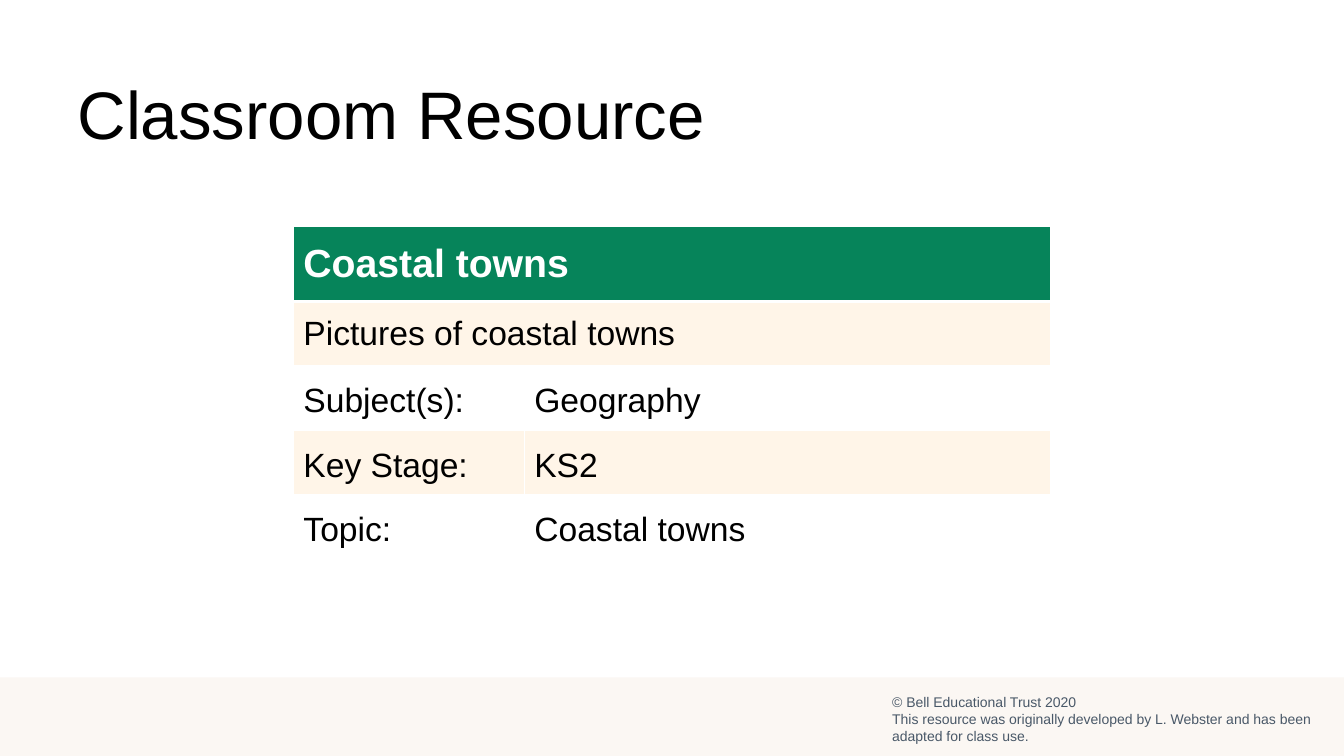
"""Build the title slide of a teaching resource on coastal towns."""
from lxml.etree import SubElement
from pptx import Presentation
from pptx.dml.color import RGBColor
from pptx.enum.shapes import MSO_SHAPE as Shape
from pptx.enum.text import MSO_ANCHOR as Anchor, MSO_AUTO_SIZE as AutoSize
from pptx.oxml.ns import qn
from pptx.util import Inches, Pt

FONT = "Arial"
BLACK = RGBColor(0x00, 0x00, 0x00)
WHITE = RGBColor(0xFF, 0xFF, 0xFF)
GREEN = RGBColor(0x06, 0x84, 0x5A)
CREAM = RGBColor(0xFF, 0xF5, 0xE8)
FOOTER_FILL = RGBColor(0xFB, 0xF7, 0xF3)
SLATE = RGBColor(0x49, 0x58, 0x68)

COLUMN_WIDTHS = (2.29, 5.22)
HEADER_HEIGHT, ROW_HEIGHT = 0.74, 0.64
ROWS = [
    ("Coastal towns",),
    ("Pictures of coastal towns",),
    ("Subject(s):", "Geography"),
    ("Key Stage:", "KS2"),
    ("Topic:", "Coastal towns"),
]
CREDITS = [
    "© Bell Educational Trust 2020",
    "This resource was originally developed by L. Webster and has been "
    "adapted for class use.",
]


def style_font(para, size, color, bold=False):
    """Set the font of a whole paragraph."""
    font = para.font
    font.name, font.size, font.bold = FONT, Pt(size), bold
    font.color.rgb = color


def add_text(slide, lines, left, top, width, height, size, color, wrap):
    """Place a text box with one paragraph for each line."""
    box = slide.shapes.add_textbox(*map(Inches, (left, top, width, height)))
    frame = box.text_frame
    frame.word_wrap = wrap
    frame.auto_size = AutoSize.SHAPE_TO_FIT_TEXT
    frame.text = "\n".join(lines)
    for para in frame.paragraphs:
        style_font(para, size, color)


def set_borders(cell, **widths):
    """Draw white cell borders, one point wide unless a side says otherwise."""
    properties = cell._tc.get_or_add_tcPr()
    for side in "LRTB":
        line = SubElement(properties, qn(f"a:ln{side}"),
                          w=str(Pt(widths.get(side, 1))))
        fill = SubElement(line, qn("a:solidFill"))
        SubElement(fill, qn("a:srgbClr"), val=str(WHITE))


def add_details(slide, left, top):
    """Place the resource table with its header and banded rows."""
    height = HEADER_HEIGHT + ROW_HEIGHT * (len(ROWS) - 1)
    table = slide.shapes.add_table(
        len(ROWS), len(COLUMN_WIDTHS), Inches(left), Inches(top),
        Inches(sum(COLUMN_WIDTHS)), Inches(height)).table
    for column, width in zip(table.columns, COLUMN_WIDTHS):
        column.width = Inches(width)
    for index, texts in enumerate(ROWS):
        header = index == 0
        table.rows[index].height = Inches(HEADER_HEIGHT if header else ROW_HEIGHT)
        widths = {0: {"B": 3}, 1: {"T": 3}}.get(index, {})
        for column in range(len(COLUMN_WIDTHS)):
            cell = table.cell(index, column)
            set_borders(cell, **widths)
            cell.fill.solid()
            cell.fill.fore_color.rgb = GREEN if header else CREAM if index % 2 else WHITE
            cell.vertical_anchor = Anchor.MIDDLE
        if len(texts) == 1:
            table.cell(index, 0).merge(table.cell(index, len(COLUMN_WIDTHS) - 1))
        for column, text in enumerate(texts):
            cell = table.cell(index, column)
            cell.text = text
            para = cell.text_frame.paragraphs[0]
            if len(texts) > 1:
                para.line_spacing = 1.15
                para.space_after = Pt(10)
            style_font(para, 28 if header else 24, WHITE if header else BLACK, header)


def add_footer(slide, left, top, width, height):
    """Place the footer band with the credits at its right."""
    band = slide.shapes.add_shape(
        Shape.RECTANGLE, *map(Inches, (left, top, width, height)))
    band.shadow.inherit = False
    band.fill.solid()
    band.fill.fore_color.rgb = FOOTER_FILL
    band.line.fill.background()
    add_text(slide, CREDITS, left + 8.75, top + 0.11, 4.51, 0.61, 10, SLATE, True)


def main():
    """Build and save the deck."""
    deck = Presentation()
    deck.slide_width, deck.slide_height = Inches(13.33), Inches(7.5)
    page = deck.slides.add_slide(deck.slide_layouts[6])
    add_text(page, ["Classroom Resource"], 0.67, 0.67, 6.62, 0.91, 48, BLACK, False)
    add_details(page, 2.91, 2.25)
    add_footer(page, 0, 6.72, 13.33, 0.78)
    deck.save("out.pptx")


if __name__ == "__main__":
    main()
